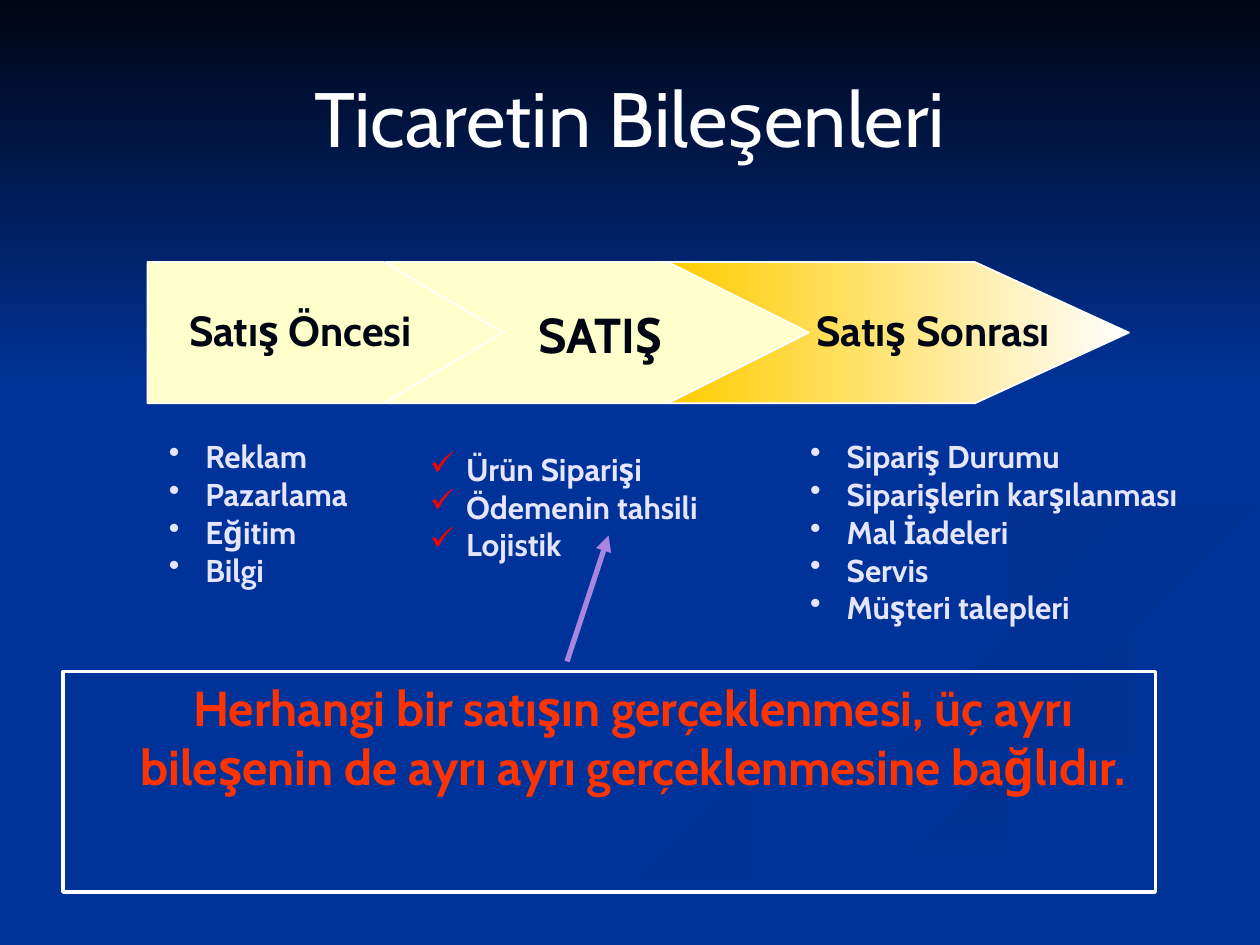
from math import hypot

from lxml import etree
from pptx import Presentation, util as u
from pptx.dml.color import RGBColor
from pptx.enum import shapes, text
from pptx.oxml import ns

Inches, Pt = u.Inches, u.Pt
FONT = "Cabin"
HEX = dict(blue="003399", navy="000514", shade="002F8D", dim="003193",
           white="FFFFFF", cream="FFFFCC", gold="FFCC00", pale="E5E5FF",
           red="FF0000", orange="FF3300", lilac="A886E0")

# Ribbons: knots of (x, y, half width) in inches, start colour, end colour, angle
RIBBONS = [
    ([(5.72, 4.62, 0), (6.1, 5.02, 0.03), (7.3, 5.36, 0.02), (7.93, 5.8, 0.07),
      (6.9, 6.2, 0.09), (5, 6.74, 0.14), (3.4, 7.4, 0.1)], "blue", "dim", 0),
    ([(7.24, 4.64, 0), (7.8, 5.12, 0.04), (8.9, 5.44, 0.06), (9.3, 5.75, 0.12),
      (8.94, 6.05, 0)], "blue", "dim", 45),
    ([(5.4, 7.4, 0.1), (6.5, 6.98, 0.13), (7.7, 6.55, 0.1), (9.94, 5.95, 0.14)],
     "shade", "blue", 90),
    ([(9.95, 4.11, 0.09), (8.5, 4.37, 0.08), (7.95, 4.64, 0.1), (8.26, 4.96, 0)],
     "dim", "blue", 45),
    ([(7.62, 2.33, 0), (8.6, 2.88, 0.03), (8.91, 3.4, 0.03), (8.5, 3.83, 0.06),
      (7.4, 4.1, 0.09), (6.2, 4.36, 0.11), (5.85, 4.65, 0.08), (6.22, 5, 0)],
     "shade", "blue", 45),
]


def rgb(name):
    return RGBColor.from_string(HEX[name])


def paint(shape, fill=None, line=None, width=1, end=None, angle=0):
    """Fill with one colour, or a gradient when an end colour is given."""
    shape.shadow.inherit = False
    if end:
        shape.fill.gradient()
        shape.fill.gradient_angle = (360 - angle) % 360
        for stop, name in zip(shape.fill.gradient_stops, (fill, end)):
            stop.color.rgb = rgb(name)
    elif fill:
        shape.fill.solid()
        shape.fill.fore_color.rgb = rgb(fill)
    else:
        shape.fill.background()
    if line:
        shape.line.color.rgb = rgb(line)
        shape.line.width = Pt(width)
    else:
        shape.line.fill.background()


def style(para, size, color, bold=True):
    font = para.font
    font.name, font.size, font.bold = FONT, Pt(size), bold
    font.color.rgb = rgb(color)


def add_text(slide, box, lines, size, color):
    frame = slide.shapes.add_textbox(*map(Inches, box)).text_frame
    frame.word_wrap = True
    frame.margin_left = frame.margin_right = Inches(0.09)
    frame.margin_top = frame.margin_bottom = Inches(0.04)
    frame.text = "\n".join(lines)
    for para in frame.paragraphs:
        style(para, size, color)
    return frame


def smooth(knots, steps=6):
    """Points on a Catmull-Rom curve through the knots."""
    ends = [knots[0], *knots, knots[-1]]
    points = []
    for a, b, c, d in zip(ends, ends[1:], ends[2:], ends[3:]):
        for step in range(steps):
            t = step / steps
            points.append([q + t / 2 * (r - p + t * (2 * p - 5 * q + 4 * r - s
                                                    + t * (3 * (q - r) + s - p)))
                           for p, q, r, s in zip(a, b, c, d)])
    return points + [knots[-1]]


def add_ribbon(slide, knots, start, end, angle):
    line = smooth(knots)
    near, far = [], []
    for prev, (x, y, half), after in zip([line[0], *line], line, [*line[1:], line[-1]]):
        dx, dy = after[0] - prev[0], after[1] - prev[1]
        size = hypot(dx, dy)
        near.append((x - dy / size * half, y + dx / size * half))
        far.append((x + dy / size * half, y - dx / size * half))
    points = near + far[::-1]
    pen = slide.shapes.build_freeform(*points[0], scale=Inches(1))
    pen.add_line_segments(points[1:], close=True)
    paint(pen.convert_to_shape(), start, end=end, angle=angle)


def add_back(slide):
    fill = slide.background.fill
    fill.solid()
    fill.fore_color.rgb = rgb("blue")
    for ribbon in RIBBONS:
        add_ribbon(slide, *ribbon)
    band = slide.shapes.add_shape(shapes.MSO_SHAPE.RECTANGLE, 0, 0, Inches(10), Inches(3.08))
    paint(band, "navy", end="blue", angle=90)


def add_title(slide, box, words):
    title = slide.shapes.title
    title.left, title.top, title.width, title.height = map(Inches, box)
    frame = title.text_frame
    frame.text = words
    frame.vertical_anchor = text.MSO_ANCHOR.MIDDLE
    para = frame.paragraphs[0]
    para.alignment = text.PP_ALIGN.CENTER
    style(para, 44, "white", False)
    # Bring the title in front of the backdrop
    title.element.getparent().append(title.element)


def add_steps(slide, box):
    left, top, width, height = box
    # Start and width of each arrow, rightmost at the back
    arrows = [(4.13, width - 4.13, 1.09, "gold", "white"),
              (1.89, 3.36, 1, "cream", None), (0, 2.82, 0.84, "cream", None)]
    for start, wide, tip, fill, end in arrows:
        arrow = slide.shapes.add_shape(
            shapes.MSO_SHAPE.PENTAGON, *map(Inches, (left + start, top, wide, height)))
        arrow.adjustments[0] = tip
        paint(arrow, fill, "white", end=end)
    labels = [("Satış Öncesi", 0.24, 2.21, 24), ("SATIŞ", 3.01, 1.35, 28),
              ("Satış Sonrası", 5.22, 2.34, 24)]
    for label, start, wide, size in labels:
        add_text(slide, (left + start, top + 0.3, wide, 0.5), [label], size, "navy")


def add_list(slide, box, items, mark="•", tint=None):
    frame = add_text(slide, box, items, 18, "pale")
    for para in frame.paragraphs:
        props = para._p.get_or_add_pPr()
        props.set("marL", str(Inches(0.29)))
        props.set("indent", str(-Inches(0.29)))
        if tint:
            color = etree.SubElement(props, ns.qn("a:buClr"))
            etree.SubElement(color, ns.qn("a:srgbClr")).set("val", HEX[tint])
        etree.SubElement(props, ns.qn("a:buChar")).set("char", mark)
        # Bullet settings come before the default run settings
        props.append(props.find(ns.qn("a:defRPr")))


def add_note(slide, box, words):
    note = slide.shapes.add_shape(shapes.MSO_SHAPE.RECTANGLE, *map(Inches, box))
    paint(note, line="white", width=2)
    frame = note.text_frame
    frame.word_wrap = True
    frame.vertical_anchor = text.MSO_ANCHOR.TOP
    frame.text = words
    para = frame.paragraphs[0]
    para.alignment = text.PP_ALIGN.CENTER
    para.space_before = Pt(6)
    para._p.get_or_add_pPr().set("marL", str(Inches(0.38)))
    style(para, 28, "orange")


def add_arrow(slide, ends):
    link = slide.shapes.add_connector(shapes.MSO_CONNECTOR.STRAIGHT, *map(Inches, ends))
    link.line.color.rgb = rgb("lilac")
    link.line.width = Pt(3)
    etree.SubElement(link.line._get_or_add_ln(), ns.qn("a:tailEnd")).set("type", "triangle")
    etree.SubElement(link._element.spPr, ns.qn("a:effectLst"))


def main():
    deck = Presentation()
    deck.slide_width, deck.slide_height = Inches(10), Inches(7.5)
    slide = deck.slides.add_slide(deck.slide_layouts[5])
    add_back(slide)
    add_title(slide, (0.5, 0.3, 9, 1.25), "Ticaretin Bileşenleri")
    add_steps(slide, (1.17, 2.08, 7.79, 1.12))
    # What each step holds
    add_list(slide, (1.25, 3.43, 1.67, 1.29), ["Reklam", "Pazarlama", "Eğitim", "Bilgi"])
    add_list(slide, (3.32, 3.53, 2.56, 0.99),
             ["Ürün Siparişi", "Ödemenin tahsili", "Lojistik"], "✓", "red")
    add_list(slide, (6.34, 3.43, 3.43, 1.59),
             ["Sipariş Durumu", "Siparişlerin karşılanması", "Mal İadeleri",
              "Servis", "Müşteri talepleri"])
    # Closing remark
    add_note(slide, (0.5, 5.33, 8.67, 1.75),
             "Herhangi bir satışın gerçeklenmesi, üç ayrı bileşenin de "
             "ayrı ayrı gerçeklenmesine bağlıdır.")
    add_arrow(slide, (4.5, 5.25, 4.83, 4.25))
    deck.save("out.pptx")


if __name__ == "__main__":
    main()
